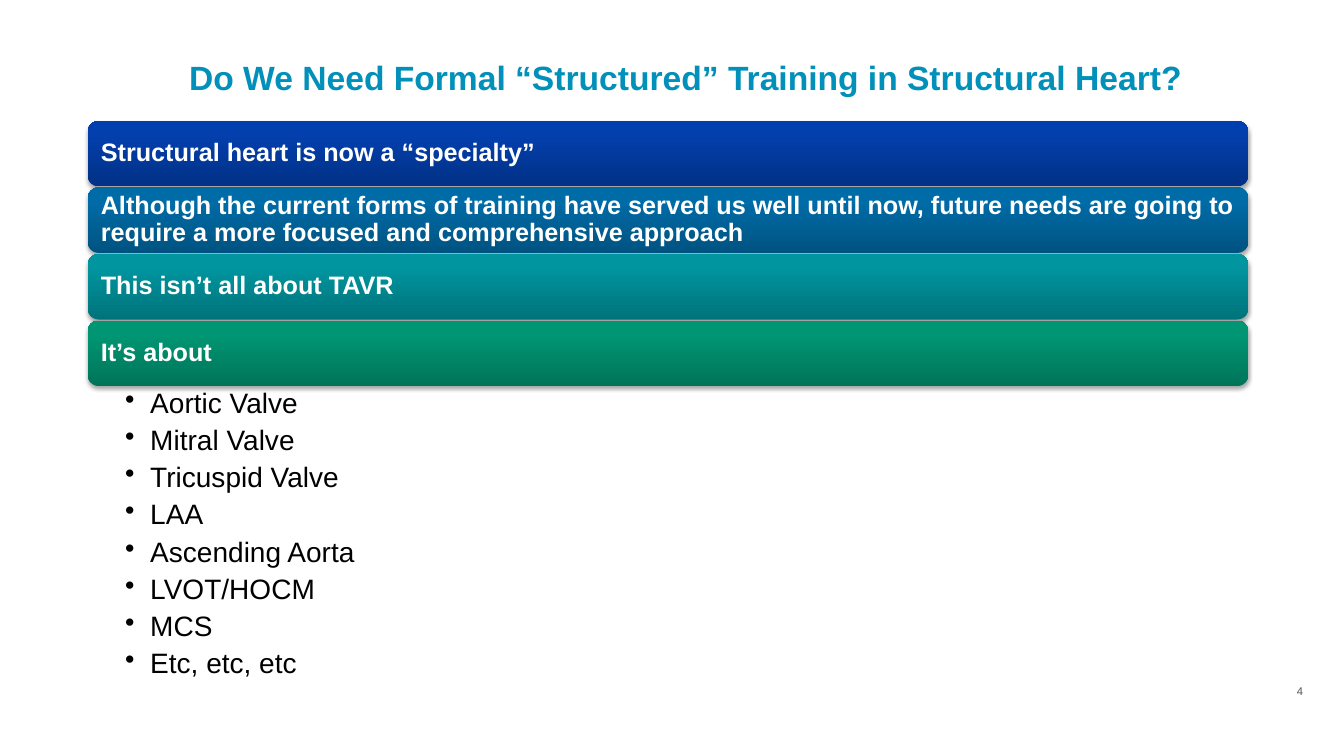
from lxml import etree
from pptx import Presentation
from pptx.dml.color import RGBColor
from pptx.enum.shapes import MSO_SHAPE
from pptx.enum.text import MSO_ANCHOR, PP_ALIGN
from pptx.oxml import parse_xml
from pptx.oxml.ns import nsdecls, qn
from pptx.util import Inches, Pt

STATEMENTS = [
    ("Structural heart is now a “specialty”", ("023185", "033FAD", "003FB0")),
    ("Although the current forms of training have served us well until now, "
     "future needs are going to require a more focused and comprehensive approach",
     ("005381", "006CA7", "006DA8")),
    ("This isn’t all about TAVR", ("00737A", "00959F", "00969F")),
    ("It’s about", ("007459", "009673", "009774")),
]
TOPICS = ["Aortic Valve", "Mitral Valve", "Tricuspid Valve", "LAA",
          "Ascending Aorta", "LVOT/HOCM", "MCS", "Etc, etc, etc"]

LEFT, WIDTH = 0.87, 11.51
BAR_TOP, BAR_HEIGHT, BAR_PITCH = 1.2, 0.65, 0.66


def rgb(value):
    return RGBColor.from_string(value)


class SlideBuilder:
    font = "Arial"

    def __init__(self, slide):
        self.slide = slide

    def add_run(self, paragraph, text, size, color, bold=False):
        run = paragraph.add_run()
        run.text = text
        run.font.name = self.font
        run.font.size = Pt(size)
        run.font.bold = bold
        run.font.color.rgb = rgb(color)

    def set_frame(self, frame, insets, anchor):
        """Wrap the text and set insets as left, top, right, bottom."""
        frame.word_wrap = True
        frame.vertical_anchor = anchor
        (frame.margin_left, frame.margin_top,
         frame.margin_right, frame.margin_bottom) = map(Inches, insets)

    def text_box(self, box, insets, anchor=MSO_ANCHOR.TOP):
        frame = self.slide.shapes.add_textbox(*map(Inches, box)).text_frame
        self.set_frame(frame, insets, anchor)
        return frame

    def label(self, text, box, insets, size, color, bold=False,
              anchor=MSO_ANCHOR.TOP):
        """Add one centred line of text."""
        paragraph = self.text_box(box, insets, anchor).paragraphs[0]
        paragraph.alignment = PP_ALIGN.CENTER
        self.add_run(paragraph, text, size, color, bold)

    def bar(self, text, top, shades):
        bar = self.slide.shapes.add_shape(
            MSO_SHAPE.ROUNDED_RECTANGLE,
            *map(Inches, (LEFT, top, WIDTH, BAR_HEIGHT)))
        bar.line.fill.background()
        self.shade(bar, shades)
        self.cast_shadow(bar)
        self.set_frame(bar.text_frame, (0.1,) * 4, MSO_ANCHOR.MIDDLE)
        paragraph = bar.text_frame.paragraphs[0]
        paragraph.alignment = PP_ALIGN.LEFT
        paragraph.line_spacing = 0.9
        self.add_run(paragraph, text, 18, "FFFFFF", bold=True)

    def shade(self, shape, shades):
        """Fill with a three-stop gradient that rises from the bottom edge."""
        stops = "".join(
            f'<a:gs pos="{position * 1000}"><a:srgbClr val="{shade}"/></a:gs>'
            for position, shade in zip((0, 80, 100), shades))
        gradient = parse_xml(
            f'<a:gradFill {nsdecls("a")} rotWithShape="1"><a:gsLst>{stops}'
            '</a:gsLst><a:lin ang="16200000" scaled="0"/></a:gradFill>')
        shape.element.spPr.find(qn("a:prstGeom")).addnext(gradient)

    def cast_shadow(self, shape):
        shape.shadow.inherit = False
        shape.element.spPr.find(qn("a:effectLst")).append(parse_xml(
            f'<a:outerShdw {nsdecls("a")} blurRad="{Pt(3.1)}" dist="{Pt(1.8)}" '
            'dir="5400000" rotWithShape="0"><a:srgbClr val="000000">'
            '<a:alpha val="35000"/></a:srgbClr></a:outerShdw>'))

    def bullets(self, items, box, insets):
        frame = self.text_box(box, insets)
        for index, item in enumerate(items):
            paragraph = frame.add_paragraph() if index else frame.paragraphs[0]
            paragraph.level = 1
            paragraph.line_spacing = 0.9
            paragraph.space_after = Pt(5)
            properties = paragraph._p.get_or_add_pPr()
            properties.set("marL", str(Inches(0.25)))
            properties.set("indent", str(Inches(-0.25)))
            etree.SubElement(properties, qn("a:buChar")).set("char", "•")
            self.add_run(paragraph, item, 20, "000000")


def main():
    deck = Presentation()
    deck.slide_width, deck.slide_height = Inches(13.33), Inches(7.5)
    builder = SlideBuilder(deck.slides.add_slide(deck.slide_layouts[6]))

    for row, (statement, shades) in enumerate(STATEMENTS):
        builder.bar(statement, BAR_TOP + row * BAR_PITCH, shades)
    builder.bullets(TOPICS, (LEFT, 3.83, WIDTH, 2.43), (0.37, 0.03, 0.16, 0.03))
    builder.label("Do We Need Formal “Structured” Training in Structural Heart?",
                  (1.05, 0.52, 11.5, 0.67), (0.1, 0.05, 0.1, 0.05),
                  24, "0090BA", bold=True)
    builder.label("4", (12.76, 6.79, 0.27, 0.13), (0,) * 4, 8, "555555",
                  anchor=MSO_ANCHOR.MIDDLE)
    deck.save("out.pptx")


if __name__ == "__main__":
    main()
